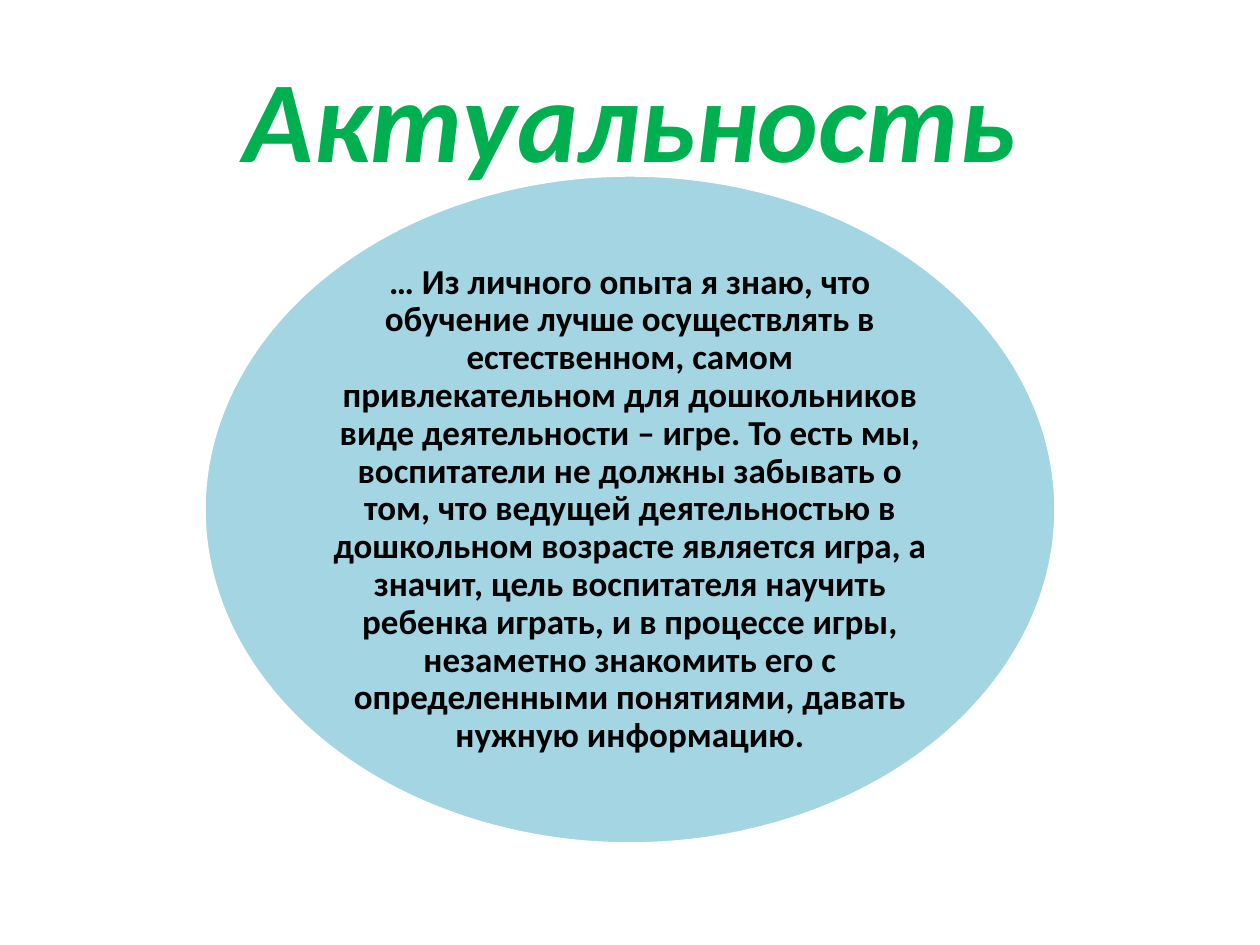
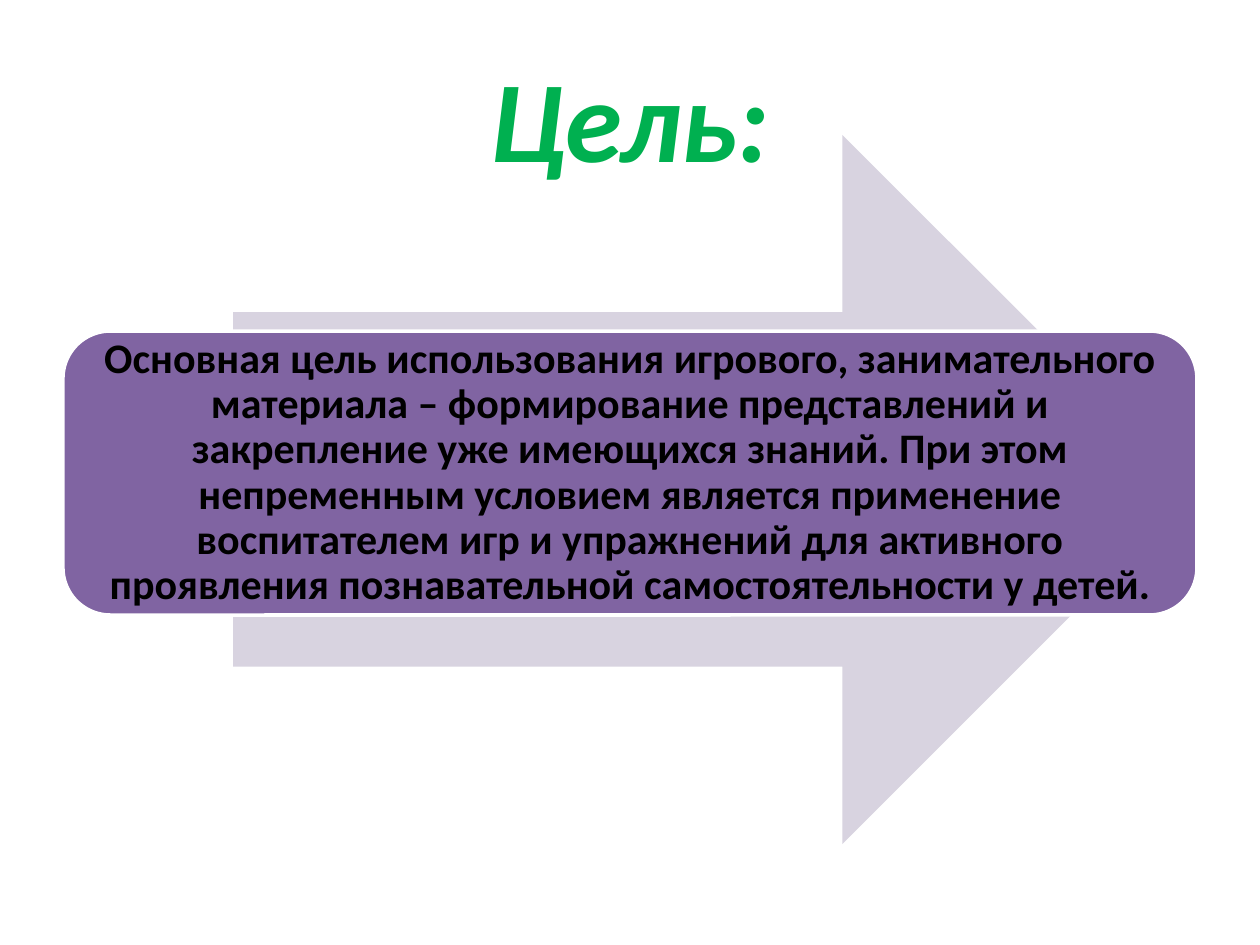
import pptx
import pptx.util
import pptx.dml.color
import pptx.enum.shapes
import pptx.enum.text
import pptx.oxml
import pptx.oxml.ns

FORM = pptx.enum.shapes.MSO_SHAPE
FONT = "Calibri"
COLORS = {"title": "00B050", "text": "000000", "line": "FFFFFF",
          "oval": "4BACC6", "arrow": "D8D3E0", "card": "8064A2"}
HEAD = (63, 38, 1134, 157)
OVAL = (204, 175, 852, 669)
GOAL = (63, 135, 1134, 709)
WHY = ("… Из личного опыта я знаю, что обучение лучше осуществлять в "
       "естественном, самом привлекательном для дошкольников виде "
       "деятельности – игре. То есть мы, воспитатели не должны забывать о "
       "том, что ведущей деятельностью в дошкольном возрасте является игра, "
       "а значит, цель воспитателя научить ребенка играть, и в процессе "
       "игры, незаметно знакомить его с определенными понятиями, давать "
       "нужную информацию.")
AIM = ("Основная цель использования игрового, занимательного материала – "
       "формирование представлений и закрепление уже имеющихся знаний. При "
       "этом непременным условием является применение воспитателем игр и "
       "упражнений для активного проявления познавательной "
       "самостоятельности у детей.")


def px(n):
    """Turn px into EMU."""
    return pptx.util.Inches(n / 126)


def rgb(name):
    """Look up a colour by name."""
    return pptx.dml.color.RGBColor.from_string(COLORS[name])


def write(shape, text, size, color, italic=False):
    """Set bold, centred text in a shape."""
    frame = shape.text_frame
    frame.text = text
    frame.word_wrap = True
    frame.vertical_anchor = pptx.enum.text.MSO_ANCHOR.MIDDLE
    para = frame.paragraphs[0]
    para.alignment = pptx.enum.text.PP_ALIGN.CENTER
    font = para.runs[0].font
    font.name, font.size = FONT, pptx.util.Pt(size)
    font.bold, font.italic = True, italic
    font.color.rgb = rgb(color)


def start(deck, text):
    """Add a slide with the shared title style."""
    slide = deck.slides.add_slide(deck.slide_layouts[5])
    title = slide.shapes.title
    title.left, title.top, title.width, title.height = map(px, HEAD)
    write(title, text, 66, "title", italic=True)
    return slide


def draw(slide, form, box, color):
    """Add a filled shape without outline or shadow."""
    shape = slide.shapes.add_shape(form, *map(px, box))
    shape.shadow.inherit = False
    shape.fill.solid()
    shape.fill.fore_color.rgb = rgb(color)
    shape.line.fill.background()
    return shape


def panel(slide, form, box, color, text, size, pad):
    """Add a white-edged shape that holds a paragraph."""
    shape = draw(slide, form, box, color)
    shape.line.color.rgb = rgb("line")
    shape.line.width = pptx.util.Pt(2)
    write(shape, text, size, "text")
    frame = shape.text_frame
    frame.margin_left = frame.margin_right = px(pad)
    frame.margin_top = frame.margin_bottom = px(pad)
    frame.paragraphs[0].line_spacing = 0.9
    return shape


def fade(shape, share):
    """Make a solid fill partly transparent."""
    tint = shape.fill._xPr.find(".//" + pptx.oxml.ns.qn("a:srgbClr"))
    alpha = pptx.oxml.parse_xml(
        f'<a:alpha {pptx.oxml.ns.nsdecls("a")} val="{share * 1000}"/>')
    tint.append(alpha)


def reason(deck, box):
    """Build the slide with the oval."""
    slide = start(deck, "Актуальность")
    fade(panel(slide, FORM.OVAL, box, "oval", WHY, 20, 0), 50)


def goal(deck, box):
    """Build the slide with the card over an arrow."""
    left, top, width, height = box
    slide = start(deck, "Цель:")
    draw(slide, FORM.RIGHT_ARROW,
         (left + 170, top, width - 170, height), "arrow")
    panel(slide, FORM.ROUNDED_RECTANGLE, (left, top + 196, width, 284),
          "card", AIM, 24, 13)


def main():
    """Build and save the deck."""
    deck = pptx.Presentation()
    deck.slide_width, deck.slide_height = px(1260), px(945)
    reason(deck, OVAL)
    goal(deck, GOAL)
    deck.save("out.pptx")


if __name__ == "__main__":
    main()
